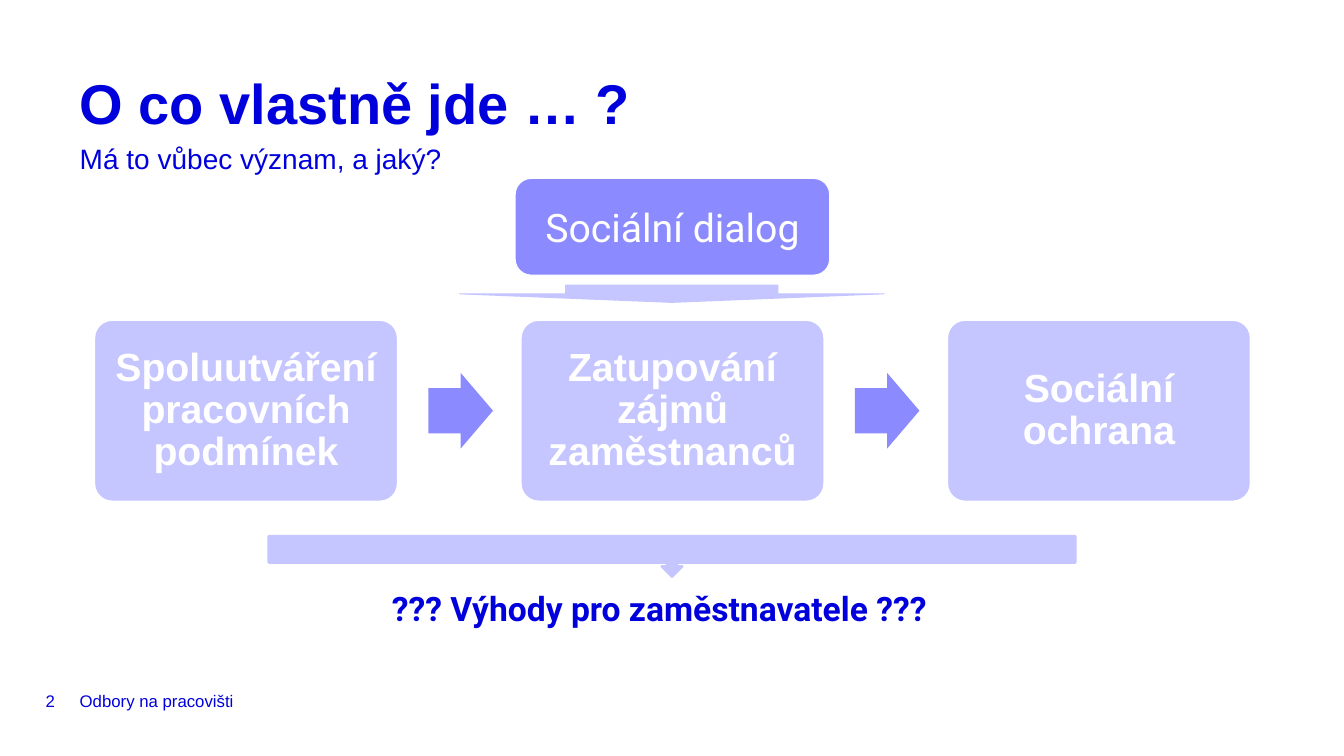
from pptx import Presentation
from pptx.dml.color import RGBColor
from pptx.enum.shapes import MSO_SHAPE
from pptx.enum.text import MSO_ANCHOR, PP_ALIGN
from pptx.util import Inches, Pt

BLUE, MID, PALE, WHITE = "0000DC", "8B8BFF", "C5C5FF", "FFFFFF"
LEFT, PITCH = 5.93, 31.73


def color(code):
    return RGBColor.from_string(code)


class Deck:
    """Holds the style and the current slide; places are percent shares of its size."""

    def __init__(self):
        self.prs = Presentation()
        self.prs.slide_width = Inches(13.33)
        self.prs.slide_height = Inches(7.5)
        self.slide = self.prs.slides.add_slide(self.prs.slide_layouts[6])
        self.font = "Arial"

    def place(self, left, top, width, height):
        wide, high = self.prs.slide_width, self.prs.slide_height
        return [int(share * side / 100) for share, side in
                ((left, wide), (top, high), (width, wide), (height, high))]

    def label(self, shape, words, size, tone, bold=False, font=None,
              align=PP_ALIGN.LEFT, anchor=MSO_ANCHOR.TOP, inset=(0, 0), lead=None):
        frame = shape.text_frame
        frame.word_wrap = True
        frame.vertical_anchor = anchor
        frame.margin_left = frame.margin_right = Inches(inset[0])
        frame.margin_top = frame.margin_bottom = Inches(inset[1])
        para = frame.paragraphs[0]
        para.alignment = align
        if lead:
            para.line_spacing = lead
        run = para.add_run()
        run.text = words
        run.font.name = font or self.font
        run.font.size = Pt(size)
        run.font.bold = bold
        run.font.color.rgb = color(tone)

    def text(self, spot, words, size, **style):
        box = self.slide.shapes.add_textbox(*self.place(*spot))
        self.label(box, words, size, BLUE, **style)

    def shape(self, kind, spot, fill, line=None, width=0.75, adjust=()):
        shape = self.slide.shapes.add_shape(kind, *self.place(*spot))
        shape.shadow.inherit = False
        shape.fill.solid()
        shape.fill.fore_color.rgb = color(fill)
        if line:
            shape.line.color.rgb = color(line)
            shape.line.width = Pt(width)
        else:
            shape.line.fill.background()
        for index, value in enumerate(adjust):
            shape.adjustments[index] = value
        return shape

    def card(self, index, words):
        spot = (6.98 + index * PITCH, 42.27, 22.65, 24.13)
        card = self.shape(MSO_SHAPE.ROUNDED_RECTANGLE, spot, PALE, WHITE, 2, [0.1])
        self.label(card, words, 28, WHITE, bold=True, align=PP_ALIGN.CENTER,
                   anchor=MSO_ANCHOR.MIDDLE, inset=(0.11, 0.12), lead=0.9)

    def arrow(self, index):
        spot = (31.88 + index * PITCH, 49.33, 4.8, 10)
        self.shape(MSO_SHAPE.RIGHT_ARROW, spot, MID, adjust=[0.6, 0.5])


def main():
    deck = Deck()
    deck.text((LEFT, 90.8, 65, 3.73), "Odbory na pracovišti", 12, anchor=MSO_ANCHOR.MIDDLE)
    deck.text((3.4, 90.8, 2.1, 3.73), "2", 12, anchor=MSO_ANCHOR.MIDDLE)
    deck.text((LEFT, 18.93, 88.2, 4), "Má to vůbec význam, a jaký?", 20, lead=Pt(23))
    deck.text((LEFT, 10.53, 88.2, 6.53), "O co vlastně jde … ?", 40, bold=True, lead=Pt(40))

    goals = ["Spoluutváření pracovních podmínek", "Zatupování zájmů zaměstnanců",
             "Sociální ochrana"]
    for index, goal in enumerate(goals):
        deck.card(index, goal)
        if index:
            deck.arrow(index - 1)

    deck.shape(MSO_SHAPE.DOWN_ARROW_CALLOUT, (20, 70.93, 60, 5.33), PALE, PALE, 2)
    deck.text((LEFT, 77.07, 86.25, 6.67), "??? Výhody pro zaměstnavatele ???", 24,
              bold=True, font="Roboto", align=PP_ALIGN.CENTER, inset=(0.1, 0.05))
    talk = deck.shape(MSO_SHAPE.ROUNDED_RECTANGLE, (38.33, 23.6, 23.4, 12.8), MID, WHITE)
    deck.label(talk, "Sociální dialog", 28, WHITE, font="Roboto", align=PP_ALIGN.CENTER,
               anchor=MSO_ANCHOR.MIDDLE, inset=(0.1, 0.05))
    deck.shape(MSO_SHAPE.DOWN_ARROW, (34.2, 37.73, 31.58, 2.27), PALE, PALE)
    deck.prs.save("out.pptx")


if __name__ == "__main__":
    main()
